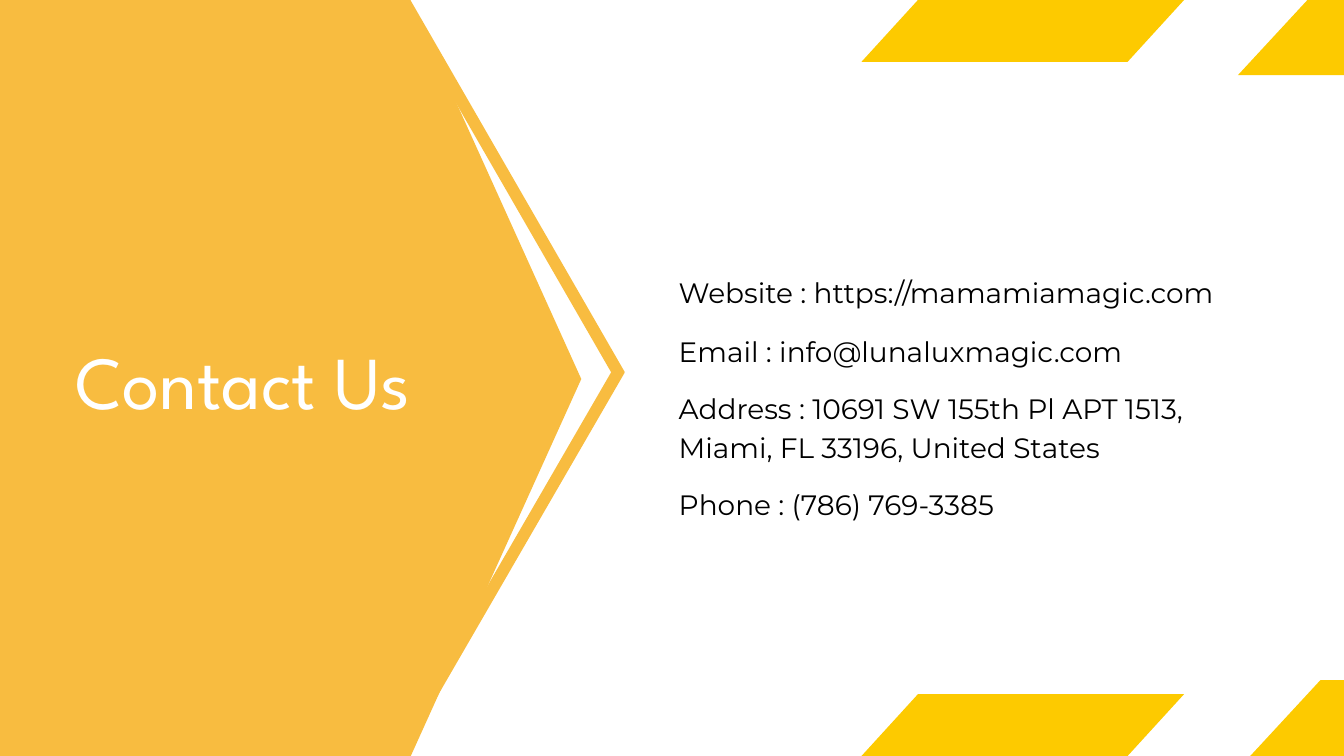
"""Build a contact slide with an arrow-shaped title panel."""
from lxml import etree
from pptx import Presentation
from pptx.dml.color import RGBColor
from pptx.enum.shapes import MSO_CONNECTOR
from pptx.enum.text import MSO_ANCHOR, MSO_AUTO_SIZE, PP_ALIGN
from pptx.oxml.ns import qn
from pptx.util import Inches, Pt

STRAIGHT = MSO_CONNECTOR.STRAIGHT
TOP = MSO_ANCHOR.TOP
LEFT = PP_ALIGN.LEFT
FIXED = MSO_AUTO_SIZE.NONE

AMBER = RGBColor(0xF8, 0xBC, 0x40)
YELLOW = RGBColor(0xFD, 0xCA, 0x00)
WHITE = RGBColor(0xFF, 0xFF, 0xFF)
BLACK = RGBColor(0x00, 0x00, 0x00)

WIDTH, HEIGHT = 20, 11.25
PANEL = [(-3.03, 5.64), (-0.33, -0.33), (5.95, -0.33),
         (8.65, 5.64), (5.95, 11.61), (-0.33, 11.61)]
EDGES = [((5.78, -0.39), (9.22, 5.58)), ((9.22, 5.5), (5.77, 11.46))]
BARS = [(12.82, 0, 4.8, 0.92, 0.84), (12.82, 10.33, 4.8, 0.92, 0.84),
        (18.42, -0.21, 2.92, 1.33, 1.23), (18.42, 10.12, 2.92, 1.33, 1.23)]
DETAILS = [
    ("Website : https://mamamiamagic.com", 4.16, 8.28, 0.45, 31.5),
    ("Email : info@lunaluxmagic.com", 4.9, 7.97, 0.55, 41.7),
    ("Address : 10691 SW 155th Pl APT 1513, Miami, FL 33196, United States",
     5.75, 8.77, 1.12, 41.7),
    ("Phone : (786) 769-3385", 7.17, 5.68, 0.55, 41.7),
]


class Deck:
    """Hold the text style and the current slide."""

    head_font, head_size = "League Spartan", 80
    body_font, body_size = "Montserrat", 30

    def __init__(self):
        """Open a deck with one title-only slide."""
        self.prs = Presentation()
        self.prs.slide_width = Inches(WIDTH)
        self.prs.slide_height = Inches(HEIGHT)
        self.slide = self.prs.slides.add_slide(self.prs.slide_layouts[5])
        self.shapes = self.slide.shapes

    def shape(self, points, color):
        """Draw a filled outline through the points."""
        spots = [(Inches(x), Inches(y)) for x, y in points]
        pen = self.shapes.build_freeform(*spots[0])
        pen.add_line_segments(spots[1:], close=True)
        form = pen.convert_to_shape()
        form.shadow.inherit = False
        form.fill.solid()
        form.fill.fore_color.rgb = color
        form.line.fill.background()

    def bar(self, left, top, width, height, slant):
        """Draw a slanted bar."""
        right, base = left + width, top + height
        self.shape([(left + slant, top), (right, top),
                    (right - slant, base), (left, base)], YELLOW)

    def line(self, start, end):
        """Draw a thick straight line."""
        ends = [Inches(n) for n in start + end]
        edge = self.shapes.add_connector(STRAIGHT, *ends)
        edge.line.color.rgb = AMBER
        edge.line.width = Pt(12.75)
        etree.SubElement(edge.element.spPr, qn("a:effectLst"))

    def label(self, box, text, font, size, color, lead):
        """Fill a box with one styled paragraph."""
        frame = box.text_frame
        frame.text = text
        frame.word_wrap = True
        frame.auto_size = FIXED
        frame.vertical_anchor = TOP
        frame.margin_left = frame.margin_right = 0
        frame.margin_top = frame.margin_bottom = 0
        para = frame.paragraphs[0]
        para.alignment = LEFT
        para.line_spacing = Pt(lead)
        para.space_before = Pt(0)
        style = para.runs[0].font
        style.name = font
        style.size = Pt(size)
        style.color.rgb = color

    def title(self, text, left, top, width, height):
        """Place the title in front of the shapes drawn so far."""
        head = self.shapes.title
        head.left, head.top = Inches(left), Inches(top)
        head.width, head.height = Inches(width), Inches(height)
        self.label(head, text, self.head_font, self.head_size, WHITE, 80)
        self.shapes.element.append(head.element)

    def text(self, text, left, top, width, height, lead):
        """Add a body text box."""
        box = self.shapes.add_textbox(Inches(left), Inches(top),
                                      Inches(width), Inches(height))
        self.label(box, text, self.body_font, self.body_size, BLACK, lead)


def main():
    """Build and save the slide."""
    deck = Deck()
    deck.shape(PANEL, AMBER)
    for start, end in EDGES:
        deck.line(start, end)
    deck.title("Contact Us", 1.12, 5.21, 7.48, 1.17)
    for bar in BARS:
        deck.bar(*bar)
    for text, top, width, height, lead in DETAILS:
        deck.text(text, 10.1, top, width, height, lead)
    deck.prs.save("out.pptx")


if __name__ == "__main__":
    main()
